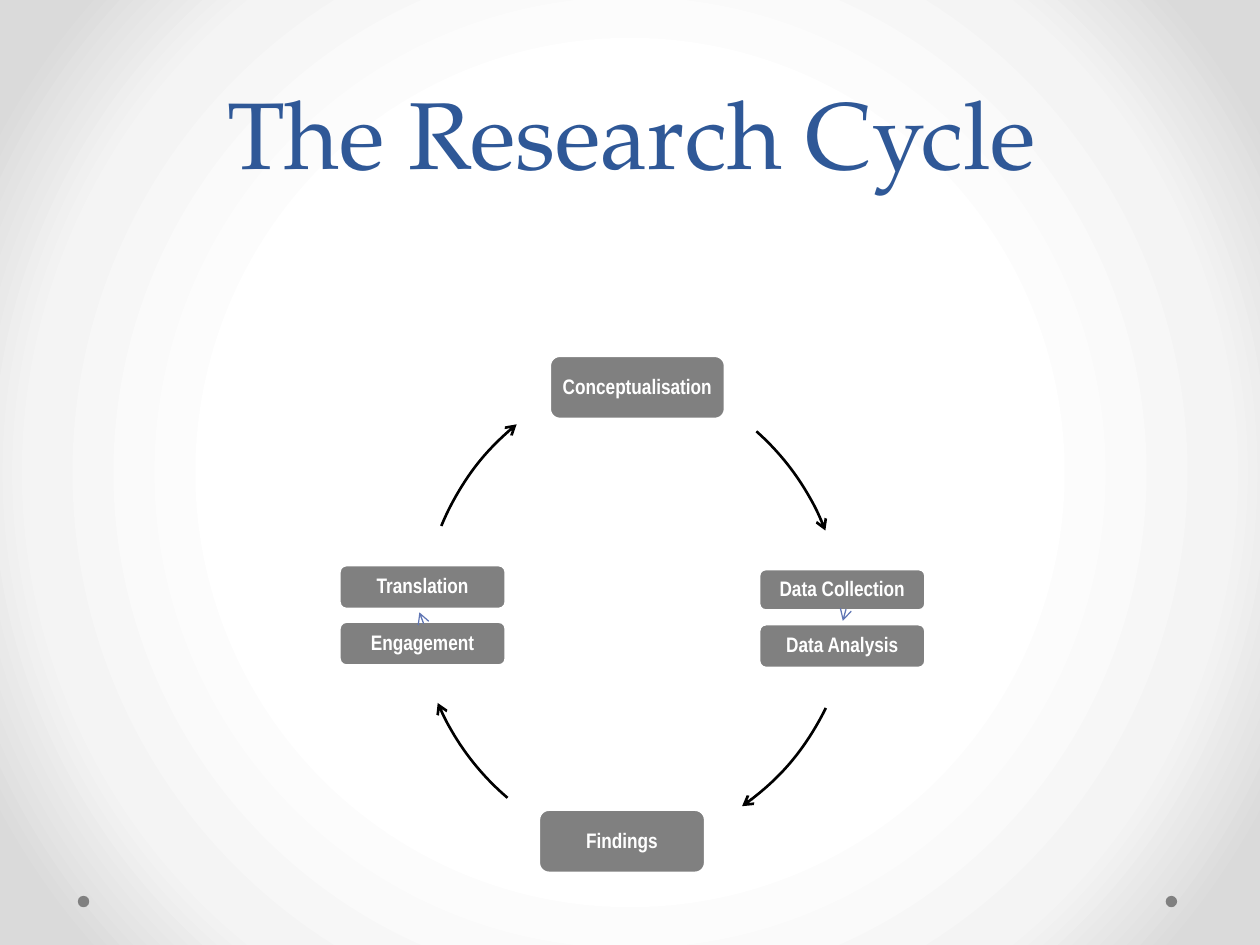
from dataclasses import dataclass

from pptx import Presentation
from pptx.dml.color import RGBColor
from pptx.enum.shapes import MSO_SHAPE
from pptx.enum.text import MSO_ANCHOR, MSO_AUTO_SIZE, PP_ALIGN
from pptx.oxml import parse_xml
from pptx.oxml.ns import nsdecls, qn
from pptx.util import Cm, Pt

ARC = MSO_SHAPE.ARC
OVAL = MSO_SHAPE.OVAL
ROUNDED = MSO_SHAPE.ROUNDED_RECTANGLE
CENTER = PP_ALIGN.CENTER
BOTTOM = MSO_ANCHOR.BOTTOM
MIDDLE = MSO_ANCHOR.MIDDLE
NO_AUTOFIT = MSO_AUTO_SIZE.NONE


@dataclass(frozen=True)
class Theme:
    """Colours, fonts and sizes used on the slide."""

    title_color: str = "2F5897"
    box_fill: str = "808080"
    box_text: str = "FFFFFF"
    stage_arrow: str = "000000"
    inner_arrow: str = "6076B4"
    title_font: str = "TeX Gyre Pagella"
    box_font: str = "Arial Narrow"
    title_size: float = 54
    title_spacing: float = 58
    box_size: float = 12
    box_line: float = 2.25
    stage_line: float = 1.5
    inner_line: float = 0.75
    background: tuple = ((50, "FFFFFF"), (76, "F4F4F4"), (92, "DADADA"))


THEME = Theme()
CIRCLE_SIZE = 10.36
STAGE = (THEME.stage_arrow, THEME.stage_line)
INNER = (THEME.inner_arrow, THEME.inner_line)

CYCLE = [
    ("Conceptualisation", (11.07, 7.16, 3.56, 1.3), (6.63, 7.39), (311.6, 338.8), STAGE),
    ("Data Collection", (15.29, 11.46, 3.38, 0.86), (6.83, 5.92), (14.2, 15.9), INNER),
    ("Data Analysis", (15.29, 12.57, 3.38, 0.91), (6.81, 6.83), (25.9, 55), STAGE),
    ("Findings", (10.85, 16.31, 3.38, 1.3), (8.41, 6.96), (130.4, 156.9), STAGE),
    ("Engagement", (6.83, 12.52, 3.38, 0.91), (8.15, 5.41), (158.7, 160.2), INNER),
    ("Translation", (6.83, 11.38, 3.38, 0.91), (8.51, 7.39), (202.3, 230.8), STAGE),
]


def rgb(color):
    """Return a colour object for a hex value."""
    return RGBColor.from_string(color)


def paint_background(slide):
    """Fill the background with a radial gradient."""
    stops = "".join(
        f'<a:gs pos="{position * 1000}"><a:srgbClr val="{color}"/></a:gs>'
        for position, color in THEME.background
    )
    gradient = parse_xml(
        f'<a:gradFill {nsdecls("a")} rotWithShape="1"><a:gsLst>{stops}</a:gsLst>'
        '<a:path path="circle"><a:fillToRect l="50000" t="50000" r="50000" b="50000"/>'
        "</a:path></a:gradFill>"
    )
    slide.background.fill.solid()
    properties = slide.element.find(".//" + qn("p:bgPr"))
    properties.replace(properties.find(qn("a:solidFill")), gradient)


def style_text(frame, anchor, font_name, size, color, bold):
    """Centre one line of text and set its font."""
    frame.auto_size = NO_AUTOFIT
    frame.word_wrap = True
    frame.vertical_anchor = anchor
    line = frame.paragraphs[0]
    line.alignment = CENTER
    font = line.runs[0].font
    font.name = font_name
    font.size = Pt(size)
    font.bold = bold
    font.color.rgb = rgb(color)


def set_title(slide, wording):
    """Place and format the title placeholder."""
    title = slide.shapes.title
    title.left, title.top, title.width, title.height = map(Cm, (1.3, 0.74, 22.86, 3.18))
    title.text_frame.text = wording
    style_text(title.text_frame, BOTTOM, THEME.title_font, THEME.title_size,
               THEME.title_color, False)
    title.text_frame.paragraphs[0].line_spacing = Pt(THEME.title_spacing)


def add_filled(slide, preset, place):
    """Add a flat grey shape."""
    shape = slide.shapes.add_shape(preset, *map(Cm, place))
    shape.shadow.inherit = False
    shape.fill.solid()
    shape.fill.fore_color.rgb = rgb(THEME.box_fill)
    return shape


def add_step(slide, wording, place):
    """Add a labelled box of the cycle."""
    step = add_filled(slide, ROUNDED, place)
    step.line.color.rgb = rgb(THEME.box_text)
    step.line.width = Pt(THEME.box_line)
    frame = step.text_frame
    frame.margin_left = frame.margin_right = Cm(0.13)
    frame.margin_top = frame.margin_bottom = Cm(0.13)
    frame.text = wording
    style_text(frame, MIDDLE, THEME.box_font, THEME.box_size, THEME.box_text, True)
    frame.paragraphs[0].line_spacing = 0.9


def add_arc_arrow(slide, corner, angles, color, width):
    """Add a clockwise arc, in degrees, that ends in an arrowhead."""
    arrow = slide.shapes.add_shape(ARC, *map(Cm, (*corner, CIRCLE_SIZE, CIRCLE_SIZE)))
    arrow.shadow.inherit = False
    arrow.fill.background()
    for index, angle in enumerate(angles):
        arrow.adjustments[index] = angle * 0.6
    arrow.line.color.rgb = rgb(color)
    arrow.line.width = Pt(width)
    outline = arrow.element.spPr.find(qn("a:ln"))
    outline.append(parse_xml(f'<a:tailEnd {nsdecls("a")} type="arrow"/>'))


def main():
    """Build and save the slide."""
    presentation = Presentation()
    presentation.slide_width, presentation.slide_height = Cm(25.4), Cm(19.05)
    slide = presentation.slides.add_slide(presentation.slide_layouts[5])
    paint_background(slide)
    for dot_left in (23.5, 1.57):
        dot = add_filled(slide, OVAL, (dot_left, 18.06, 0.23, 0.23))
        dot.line.fill.background()
    set_title(slide, "The Research Cycle")
    for wording, place, corner, angles, arrow_style in CYCLE:
        add_step(slide, wording, place)
        add_arc_arrow(slide, corner, angles, *arrow_style)
    presentation.save("out.pptx")


if __name__ == "__main__":
    main()
